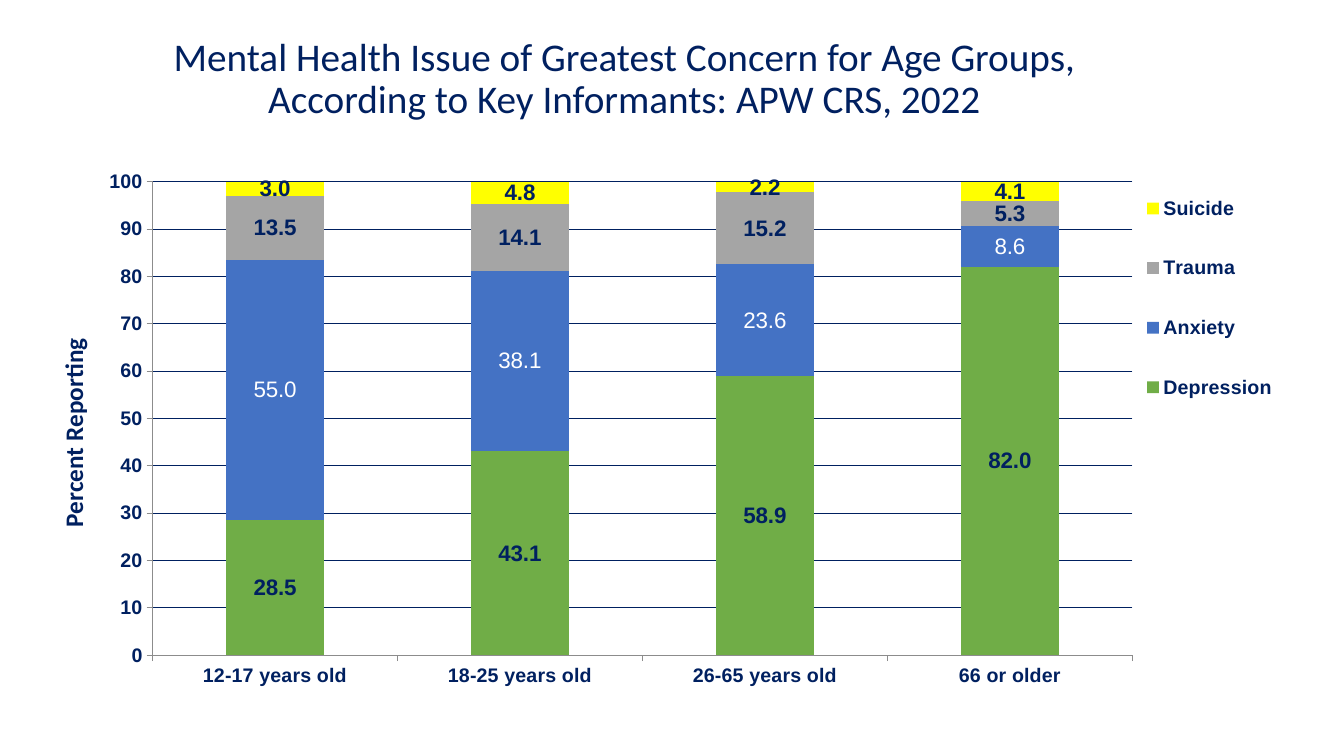
from lxml import etree
from pptx import Presentation
from pptx.chart.data import CategoryChartData
from pptx.dml.color import RGBColor
from pptx.enum.chart import XL_CHART_TYPE, XL_LEGEND_POSITION, XL_TICK_MARK
from pptx.enum.text import MSO_ANCHOR, PP_ALIGN
from pptx.oxml.ns import qn
from pptx.util import Inches, Pt

STACKED = XL_CHART_TYPE.COLUMN_STACKED
LEGEND_RIGHT = XL_LEGEND_POSITION.RIGHT
TICK_OUTSIDE, TICK_NONE = XL_TICK_MARK.OUTSIDE, XL_TICK_MARK.NONE
MIDDLE, CENTER = MSO_ANCHOR.MIDDLE, PP_ALIGN.CENTER

COLORS = {
    "navy": "002060",
    "white": "FFFFFF",
    "axis": "8C8C8C",
    "green": "70AD47",
    "blue": "4472C4",
    "gray": "A5A5A5",
    "yellow": "FFFF00",
}
AGE_GROUPS = ["12-17 years old", "18-25 years old", "26-65 years old", "66 or older"]
ISSUES = [
    ("Depression", "green", "navy", True, (28.5, 43.1, 58.9, 82.0)),
    ("Anxiety", "blue", "white", False, (55.0, 38.1, 23.6, 8.6)),
    ("Trauma", "gray", "navy", True, (13.5, 14.1, 15.2, 5.3)),
    ("Suicide", "yellow", "navy", True, (3.0, 4.8, 2.2, 4.1)),
]


class SlideBuilder:
    """Hold the style and current slide, and place elements by shares of its size."""

    heading_font = "Calibri"
    chart_font = "Arial"

    def __init__(self, presentation):
        self.width = presentation.slide_width
        self.height = presentation.slide_height
        self.slide = presentation.slides.add_slide(presentation.slide_layouts[6])
        self.slide.background.fill.solid()
        self.slide.background.fill.fore_color.rgb = self.color("white")

    def color(self, name):
        return RGBColor.from_string(COLORS[name])

    def box(self, left, top, width, height):
        return (int(left * self.width), int(top * self.height),
                int(width * self.width), int(height * self.height))

    def style_font(self, font, name, size, bold=False, color="navy"):
        font.name = name
        font.size = Pt(size)
        font.bold = bold
        font.color.rgb = self.color(color)

    def style_line(self, line, color):
        line.color.rgb = self.color(color)
        line.width = Pt(0.5)

    def title(self, text, area):
        frame = self.slide.shapes.add_textbox(*self.box(*area)).text_frame
        frame.word_wrap = True
        frame.vertical_anchor = MIDDLE
        paragraph = frame.paragraphs[0]
        paragraph.text = text
        paragraph.alignment = CENTER
        paragraph.line_spacing = 0.9
        self.style_font(paragraph.font, self.heading_font, 28)

    def layout(self, element, index, inner=False, **shares):
        for old in element.findall(qn("c:layout")):
            element.remove(old)
        layout = etree.Element(qn("c:layout"))
        manual = etree.SubElement(layout, qn("c:manualLayout"))
        settings = {"layoutTarget": "inner"} if inner else {}
        settings |= {"xMode": "edge", "yMode": "edge"} | shares
        for tag, value in settings.items():
            etree.SubElement(manual, qn(f"c:{tag}")).set("val", str(value))
        element.insert(index, layout)

    def axis(self, axis, number_format):
        axis.major_tick_mark = TICK_OUTSIDE
        axis.minor_tick_mark = TICK_NONE
        axis.tick_labels.number_format = number_format
        axis.tick_labels.number_format_is_linked = False
        self.style_font(axis.tick_labels.font, self.chart_font, 14, True)
        self.style_line(axis.format.line, "axis")

    def value_axis(self, axis, title):
        self.axis(axis, "0")
        axis.minimum_scale, axis.maximum_scale, axis.major_unit = 0, 100, 10
        axis.has_major_gridlines = True
        self.style_line(axis.major_gridlines.format.line, "navy")
        frame = axis.axis_title.text_frame
        frame.text = title
        self.style_font(frame.paragraphs[0].font, self.heading_font, 18, True)
        body = frame._txBody.find(qn("a:bodyPr"))
        body.set("rot", "-5400000")
        body.set("vert", "horz")
        self.layout(axis.axis_title._element, 1, x=0.015, y=0.33)

    def legend(self, chart):
        chart.has_legend = True
        chart.legend.position = LEGEND_RIGHT
        chart.legend.include_in_layout = False
        self.style_font(chart.legend.font, self.chart_font, 14, True)
        self.layout(chart.legend._element, 1, x=0.87, y=0.04, w=0.12, h=0.46)

    def series(self, series, fill, label_color, bold):
        series.format.fill.solid()
        series.format.fill.fore_color.rgb = self.color(fill)
        series.invert_if_negative = False
        labels = series.data_labels
        labels.show_value = True
        labels.number_format = "0.0"
        labels.number_format_is_linked = False
        self.style_font(labels.font, self.chart_font, 16, bold, label_color)

    def stacked_chart(self, categories, issues, value_title, area):
        data = CategoryChartData(number_format="0.0")
        data.categories = categories
        for name, *_, values in issues:
            data.add_series(name, values)
        chart = self.slide.shapes.add_chart(STACKED, *self.box(*area), data).chart
        chart.has_title = False
        self.style_font(chart.font, self.heading_font, 18)
        plot = chart.plots[0]
        plot.gap_width, plot.overlap = 150, 100
        plot.vary_by_categories = False
        for series, (_, fill, label_color, bold, _) in zip(plot.series, issues):
            self.series(series, fill, label_color, bold)
        self.axis(chart.category_axis, "General")
        self.value_axis(chart.value_axis, value_title)
        self.legend(chart)
        plot_area = chart._chartSpace.find(f".//{qn('c:plotArea')}")
        self.layout(plot_area, 0, inner=True, x=0.095, y=0.076, w=0.774, h=0.79)


def main():
    presentation = Presentation()
    presentation.slide_width = Inches(13.33)
    presentation.slide_height = Inches(7.5)
    builder = SlideBuilder(presentation)
    builder.title(
        "Mental Health Issue of Greatest Concern for Age Groups, "
        "According to Key Informants: APW CRS, 2022",
        (0.078, 0.043, 0.773, 0.125),
    )
    builder.stacked_chart(AGE_GROUPS, ISSUES, "Percent Reporting",
                          (0.024, 0.18, 0.942, 0.793))
    presentation.save("out.pptx")


if __name__ == "__main__":
    main()
